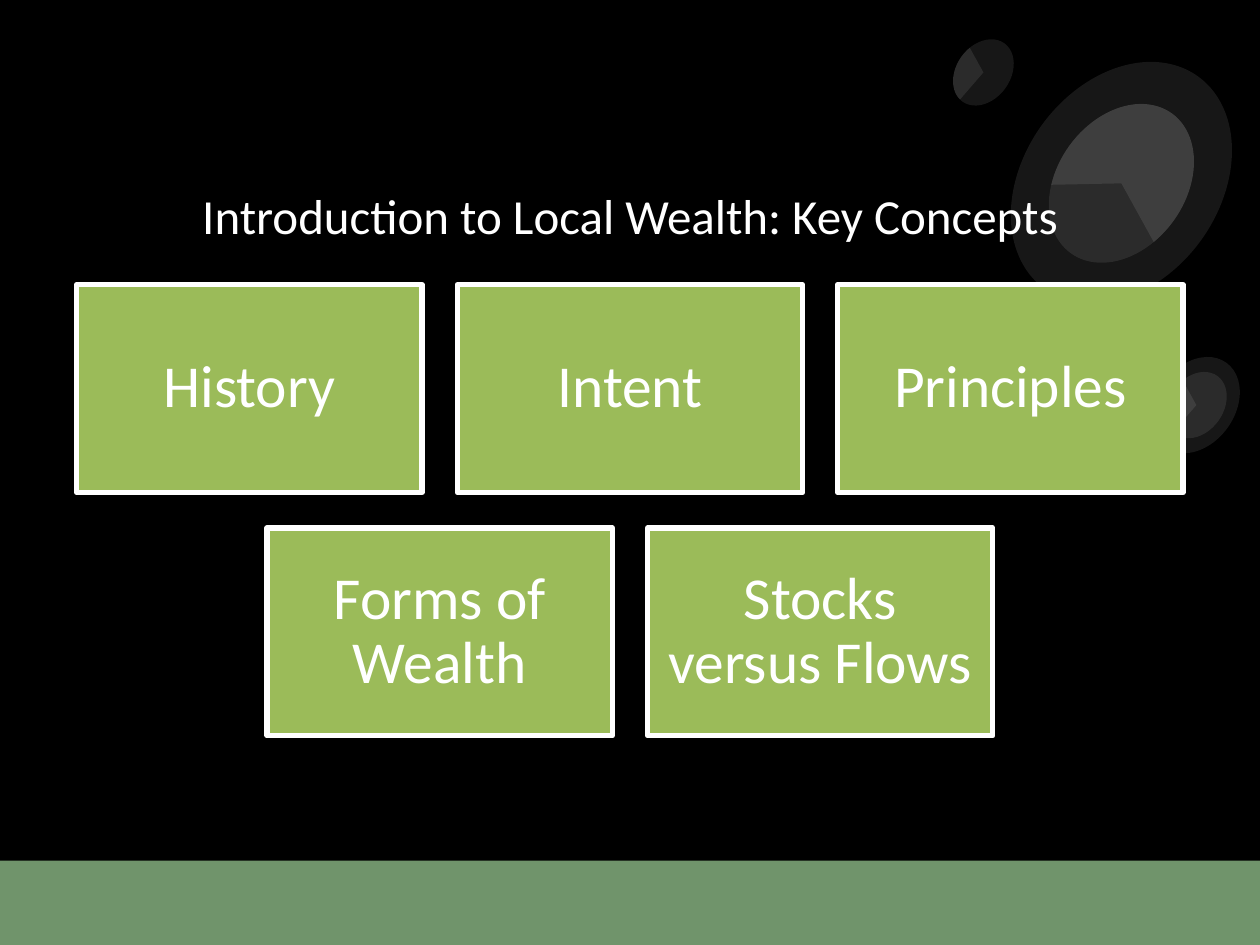
from dataclasses import dataclass
from typing import NamedTuple, Optional

from lxml import etree
from pptx import Presentation
from pptx import util as u
from pptx.dml.color import RGBColor
from pptx.enum import shapes, text
from pptx.oxml.ns import qn


@dataclass(frozen=True)
class Theme:
    background: str = "000000"
    footer: str = "70946B"
    card: str = "9BBB59"
    light: str = "FFFFFF"
    font: str = "Calibri"
    title_size: float = 28
    card_size: float = 34
    border: float = 3
    ring_opacity: int = 9


class Box(NamedTuple):
    left: float
    top: float
    width: float
    height: float


class Disc(NamedTuple):
    box: Box
    rotation: float
    pie: Optional[tuple[float, float]] = None


THEME = Theme()
SLIDE_WIDTH, SLIDE_HEIGHT = 10, 7.5
FOOTER_HEIGHT = 0.67

LARGE = Box(8.39, 0.77, 1.02, 1.37)
MEDIUM = Box(9.28, 2.93, 0.43, 0.57)
SMALL = Box(7.59, 0.29, 0.43, 0.57)
WIDE_PIE, NARROW_PIE = (193.768, 123.136), (56.999, 123.136)
DISCS = [
    Disc(LARGE, 215.9),
    Disc(LARGE, 215.9, WIDE_PIE),
    Disc(Box(8.12, 0.41, 1.56, 2.08), 215.8),
    Disc(Box(9.18, 2.8, 0.62, 0.83), 35.9),
    Disc(MEDIUM, 35.8),
    Disc(MEDIUM, 35.8, NARROW_PIE),
    Disc(SMALL, 35.8),
    Disc(SMALL, 35.8, NARROW_PIE),
]

CARD_ROWS = [["History", "Intent", "Principles"],
             ["Forms of Wealth", "Stocks versus Flows"]]
CARD_WIDTH, CARD_HEIGHT = 2.74, 1.65
CARD_GAP = 0.28
CARDS_TOP = 2.26


def inches(box: Box) -> list[u.Length]:
    return [u.Inches(value) for value in box]


def add_filled(slide, kind, box: Box, color: str):
    shape = slide.shapes.add_shape(kind, *inches(box))
    shape.shadow.inherit = False
    shape.fill.solid()
    shape.fill.fore_color.rgb = RGBColor.from_string(color)
    shape.line.fill.background()
    return shape


def write(shape, content: str, *, size: float, margin: float) -> None:
    frame = shape.text_frame
    frame.word_wrap = True
    frame.auto_size = text.MSO_AUTO_SIZE.NONE
    frame.vertical_anchor = text.MSO_ANCHOR.MIDDLE
    frame.margin_left = frame.margin_right = u.Inches(margin)
    frame.margin_top = frame.margin_bottom = u.Inches(margin)
    paragraph = frame.paragraphs[0]
    paragraph.alignment = text.PP_ALIGN.CENTER
    paragraph.line_spacing = 0.9
    run = paragraph.add_run()
    run.text = content
    run.font.name = THEME.font
    run.font.size = u.Pt(size)
    run.font.color.rgb = RGBColor.from_string(THEME.light)


def add_disc(slide, disc: Disc) -> None:
    """Draw a translucent ellipse, or a slice of one when a pie is given."""
    kind = shapes.MSO_SHAPE.PIE if disc.pie else shapes.MSO_SHAPE.OVAL
    shape = add_filled(slide, kind, disc.box, THEME.light)
    shape.rotation = disc.rotation
    for index, angle in enumerate(disc.pie or ()):
        shape.adjustments[index] = angle
    color = shape.element.spPr.find(f"{qn('a:solidFill')}/{qn('a:srgbClr')}")
    etree.SubElement(color, qn("a:alpha"), val=str(THEME.ring_opacity * 1000))


def add_title(slide, content: str) -> None:
    title = slide.shapes.title
    title.left, title.top, title.width, title.height = inches(Box(0.34, 1.42, 9.32, 0.63))
    write(title, content, size=THEME.title_size, margin=0.1)
    slide.shapes.element.append(title.element)  # in front of the discs


def add_card(slide, box: Box, label: str) -> None:
    card = add_filled(slide, shapes.MSO_SHAPE.RECTANGLE, box, THEME.card)
    card.line.color.rgb = RGBColor.from_string(THEME.light)
    card.line.width = u.Pt(THEME.border)
    write(card, label, size=THEME.card_size, margin=0.14)


def add_cards(slide) -> None:
    """Lay out the cards in rows, each centred on the slide."""
    for row, labels in enumerate(CARD_ROWS):
        row_width = len(labels) * (CARD_WIDTH + CARD_GAP) - CARD_GAP
        left = (SLIDE_WIDTH - row_width) / 2
        top = CARDS_TOP + row * (CARD_HEIGHT + CARD_GAP)
        for column, label in enumerate(labels):
            x = left + column * (CARD_WIDTH + CARD_GAP)
            add_card(slide, Box(x, top, CARD_WIDTH, CARD_HEIGHT), label)


def main() -> None:
    presentation = Presentation()
    presentation.slide_width = u.Inches(SLIDE_WIDTH)
    presentation.slide_height = u.Inches(SLIDE_HEIGHT)
    slide = presentation.slides.add_slide(presentation.slide_layouts[5])
    slide.background.fill.solid()
    slide.background.fill.fore_color.rgb = RGBColor.from_string(THEME.background)

    footer = Box(0, SLIDE_HEIGHT - FOOTER_HEIGHT, SLIDE_WIDTH, FOOTER_HEIGHT)
    add_filled(slide, shapes.MSO_SHAPE.RECTANGLE, footer, THEME.footer)
    for disc in DISCS:
        add_disc(slide, disc)
    add_title(slide, "Introduction to Local Wealth: Key Concepts")
    add_cards(slide)
    presentation.save("out.pptx")


if __name__ == "__main__":
    main()
